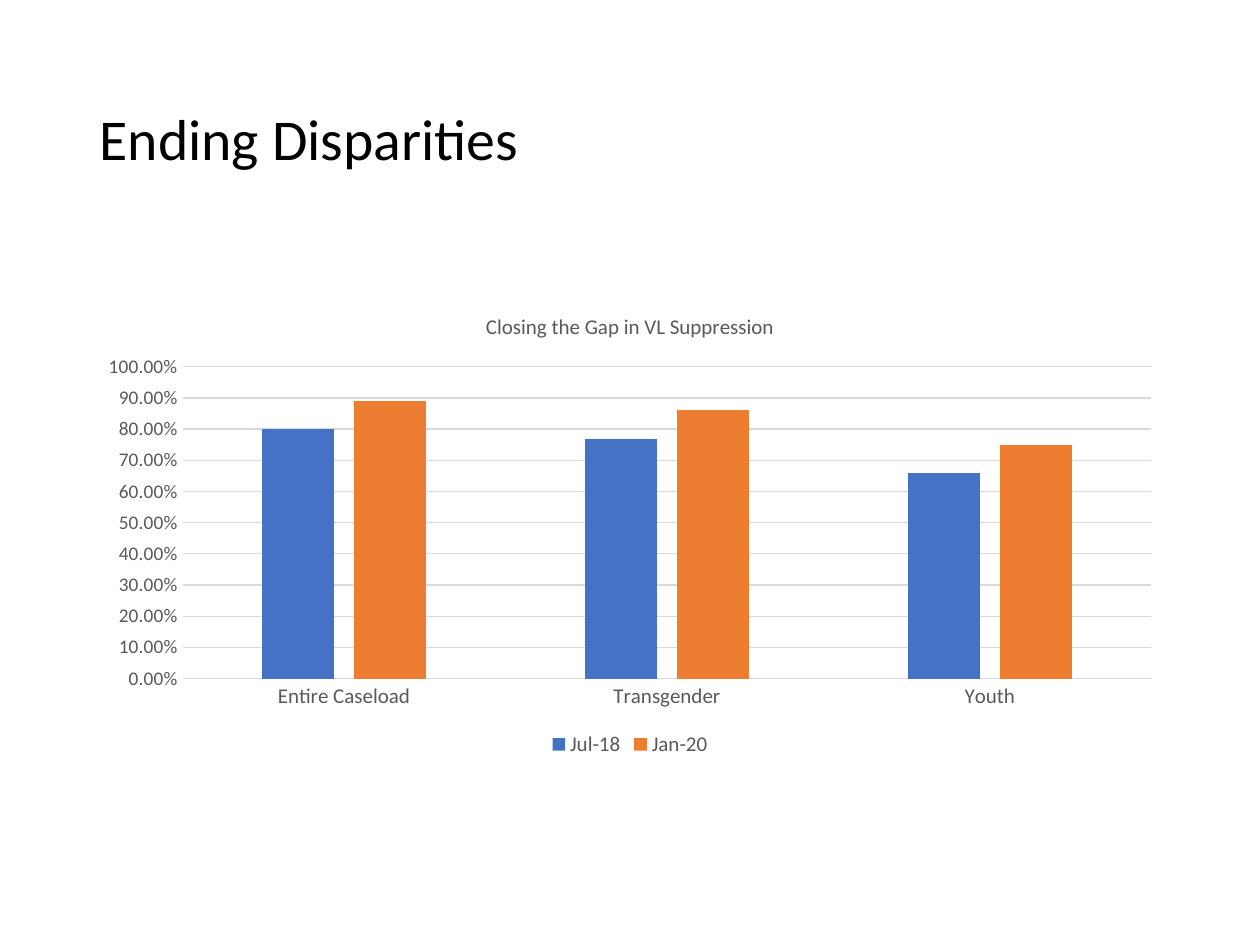
from pptx import Presentation
from pptx import util as u
from pptx.chart.data import CategoryChartData
from pptx.dml.color import RGBColor
from pptx.enum import chart as c
from pptx.enum import text as t

PX = u.Inches(1) / 126
FONT = "Calibri"
BLACK = RGBColor(0x00, 0x00, 0x00)
GRAY = RGBColor(0x59, 0x59, 0x59)
LIGHT_GRAY = RGBColor(0xD9, 0xD9, 0xD9)
BLUE = RGBColor(0x44, 0x72, 0xC4)
ORANGE = RGBColor(0xED, 0x7D, 0x31)

CATEGORIES = ["Entire Caseload", "Transgender", "Youth"]
SERIES = [
    ("Jul-18", [0.80, 0.77, 0.66], BLUE),
    ("Jan-20", [0.89, 0.86, 0.75], ORANGE),
]


def px(length):
    return u.Emu(round(length * PX))


def format_font(font, size, color=GRAY):
    font.name = FONT
    font.size = u.Pt(size)
    font.bold = False
    font.color.rgb = color


def write_text(frame, text, size, color=GRAY, align=None, line_spacing=None):
    frame.text = text
    paragraph = frame.paragraphs[0]
    paragraph.alignment = align
    paragraph.line_spacing = line_spacing
    format_font(paragraph.runs[0].font, size, color)


def format_line(line):
    line.color.rgb = LIGHT_GRAY
    line.width = u.Pt(0.75)


def add_title(slide, left, top, width, height):
    title = slide.shapes.title
    title.left, title.top = px(left), px(top)
    title.width, title.height = px(width), px(height)
    frame = title.text_frame
    frame.word_wrap = True
    frame.auto_size = t.MSO_AUTO_SIZE.NONE
    frame.vertical_anchor = t.MSO_ANCHOR.MIDDLE
    write_text(frame, "Ending Disparities", 33, BLACK, t.PP_ALIGN.LEFT, 0.9)


def add_suppression_chart(slide, left, top, width, height):
    data = CategoryChartData(number_format="0.00%")
    data.categories = CATEGORIES
    for name, values, _ in SERIES:
        data.add_series(name, values)
    chart = slide.shapes.add_chart(
        c.XL_CHART_TYPE.COLUMN_CLUSTERED,
        px(left), px(top), px(width), px(height), data).chart
    format_font(chart.font, 10, BLACK)

    # Title and legend
    chart.has_title = True
    write_text(chart.chart_title.text_frame, "Closing the Gap in VL Suppression", 12)
    chart.chart_title.include_in_layout = False
    chart.has_legend = True
    chart.legend.position = c.XL_LEGEND_POSITION.BOTTOM
    chart.legend.include_in_layout = False
    format_font(chart.legend.font, 12)

    # Columns
    plot = chart.plots[0]
    plot.vary_by_categories = False
    plot.gap_width = 219
    plot.overlap = -27
    for series, (_, _, color) in zip(plot.series, SERIES):
        series.format.fill.solid()
        series.format.fill.fore_color.rgb = color
        series.invert_if_negative = False

    # Axes
    for axis, size in ((chart.category_axis, 12), (chart.value_axis, 11)):
        axis.major_tick_mark = c.XL_TICK_MARK.NONE
        axis.minor_tick_mark = c.XL_TICK_MARK.NONE
        format_font(axis.tick_labels.font, size)
    format_line(chart.category_axis.format.line)
    value_axis = chart.value_axis
    value_axis.minimum_scale, value_axis.maximum_scale = 0, 1
    value_axis.major_unit = 0.1
    value_axis.tick_labels.number_format = "0.00%"
    value_axis.tick_labels.number_format_is_linked = False
    value_axis.format.line.fill.background()
    value_axis.has_major_gridlines = True
    format_line(value_axis.major_gridlines.format.line)


def main():
    presentation = Presentation()
    presentation.slide_width = u.Inches(10)
    presentation.slide_height = u.Inches(7.5)
    slide = presentation.slides.add_slide(presentation.slide_layouts[5])
    add_title(slide, 87, 50, 1086, 183)
    add_suppression_chart(slide, 87, 292, 1086, 470)
    presentation.save("out.pptx")


if __name__ == "__main__":
    main()
